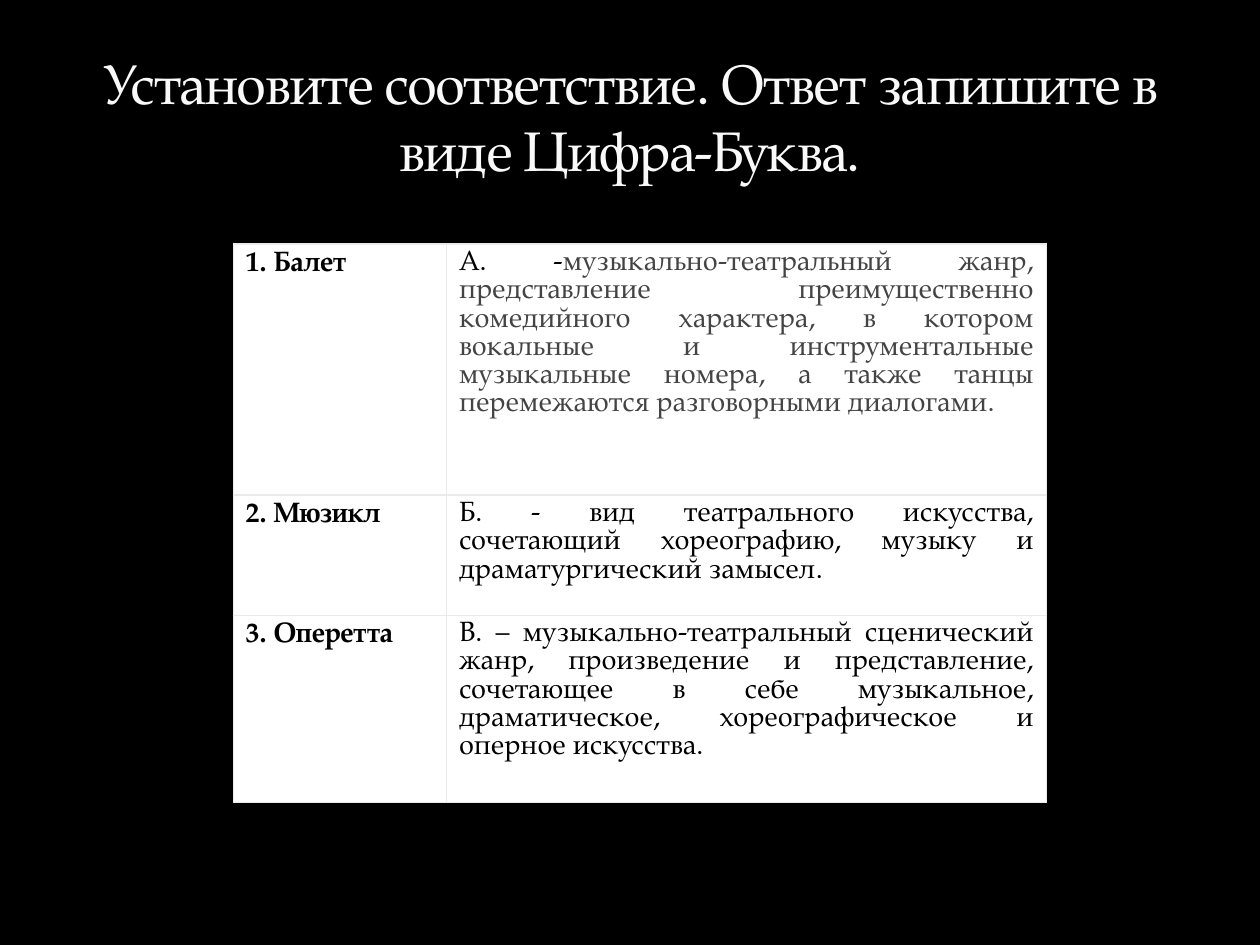
import pptx
import pptx.util
import pptx.dml.color
import pptx.enum.text
import pptx.oxml
import pptx.oxml.ns

Cm, Pt = pptx.util.Cm, pptx.util.Pt
ALIGN = pptx.enum.text.PP_ALIGN
FONT = "TeX Gyre Pagella"
HUES = {"back": "000000", "title": "F9F9F9", "cell": "FFFFFF",
        "text": "000000", "soft": "444444", "edge": "EAEAEA"}

# Content: each cell is a list of (text, colour) runs
TITLE = "Установите соответствие. Ответ запишите в виде Цифра-Буква."
ROWS = [
    ([("1. Балет", "text")],
     [("А. -", "text"),
      ("музыкально-театральный жанр, представление преимущественно "
       "комедийного характера, в котором вокальные и инструментальные "
       "музыкальные номера, а также танцы перемежаются разговорными "
       "диалогами.", "soft")]),
    ([("2. Мюзикл", "text")],
     [("Б. - вид театрального искусства, сочетающий хореографию, музыку "
       "и драматургический замысел.", "text")]),
    ([("3. Оперетта", "text")],
     [("В. – музыкально-театральный сценический жанр, произведение и "
       "представление, сочетающее в себе музыкальное, драматическое, "
       "хореографическое и оперное искусства.", "text")]),
]
WIDTHS = [4.3, 12.1]
HEIGHTS = [5.06, 2.42, 3.77]


def hue(name):
    return pptx.dml.color.RGBColor.from_string(HUES[name])


def style(font, size, bold=False):
    font.name, font.size, font.bold = FONT, Pt(size), bold


def edge(cell):
    """Draw a thin line on all four sides of a cell."""
    props = cell._tc.get_or_add_tcPr()
    for side in ("lnL", "lnR", "lnT", "lnB"):
        props.append(pptx.oxml.parse_xml(
            f'<a:{side} {pptx.oxml.ns.nsdecls("a")} w="{Pt(0.75)}">'
            f'<a:solidFill><a:srgbClr val="{HUES["edge"]}"/></a:solidFill>'
            f'</a:{side}>'))


def write(cell, runs, bold):
    edge(cell)
    cell.fill.solid()
    cell.fill.fore_color.rgb = hue("cell")
    para = cell.text_frame.paragraphs[0]
    para.alignment = ALIGN.JUSTIFY
    para.line_spacing = Pt(16.1)
    style(para.font, 16, bold)
    for text, tint in runs:
        run = para.add_run()
        run.text = text
        style(run.font, 16, bold)
        run.font.color.rgb = hue(tint)


# Slide
deck = pptx.Presentation()
deck.slide_width, deck.slide_height = Cm(25.4), Cm(19.05)
slide = deck.slides.add_slide(deck.slide_layouts[5])
slide.background.fill.solid()
slide.background.fill.fore_color.rgb = hue("back")

# Title
title = slide.shapes.title
title.left, title.top = Cm(1.27), Cm(0.43)
title.width, title.height = Cm(22.86), Cm(3.38)
frame = title.text_frame
frame.text = TITLE
frame.word_wrap = True
frame.auto_size = pptx.enum.text.MSO_AUTO_SIZE.NONE
frame.vertical_anchor = pptx.enum.text.MSO_ANCHOR.BOTTOM
head = frame.paragraphs[0]
head.alignment = ALIGN.CENTER
run = head.runs[0]
style(run.font, 32)
run.font.color.rgb = hue("title")
run.font._element.set("spc", "-100")

# Matching table
table = slide.shapes.add_table(
    len(ROWS), len(WIDTHS), Cm(4.7), Cm(4.92),
    Cm(sum(WIDTHS)), Cm(sum(HEIGHTS))).table
table.first_row = table.horz_banding = False
for col, width in zip(table.columns, WIDTHS):
    col.width = Cm(width)
for row, height, cells in zip(table.rows, HEIGHTS, ROWS):
    row.height = Cm(height)
    for num, (cell, runs) in enumerate(zip(row.cells, cells)):
        write(cell, runs, bold=num == 0)

deck.save("out.pptx")
